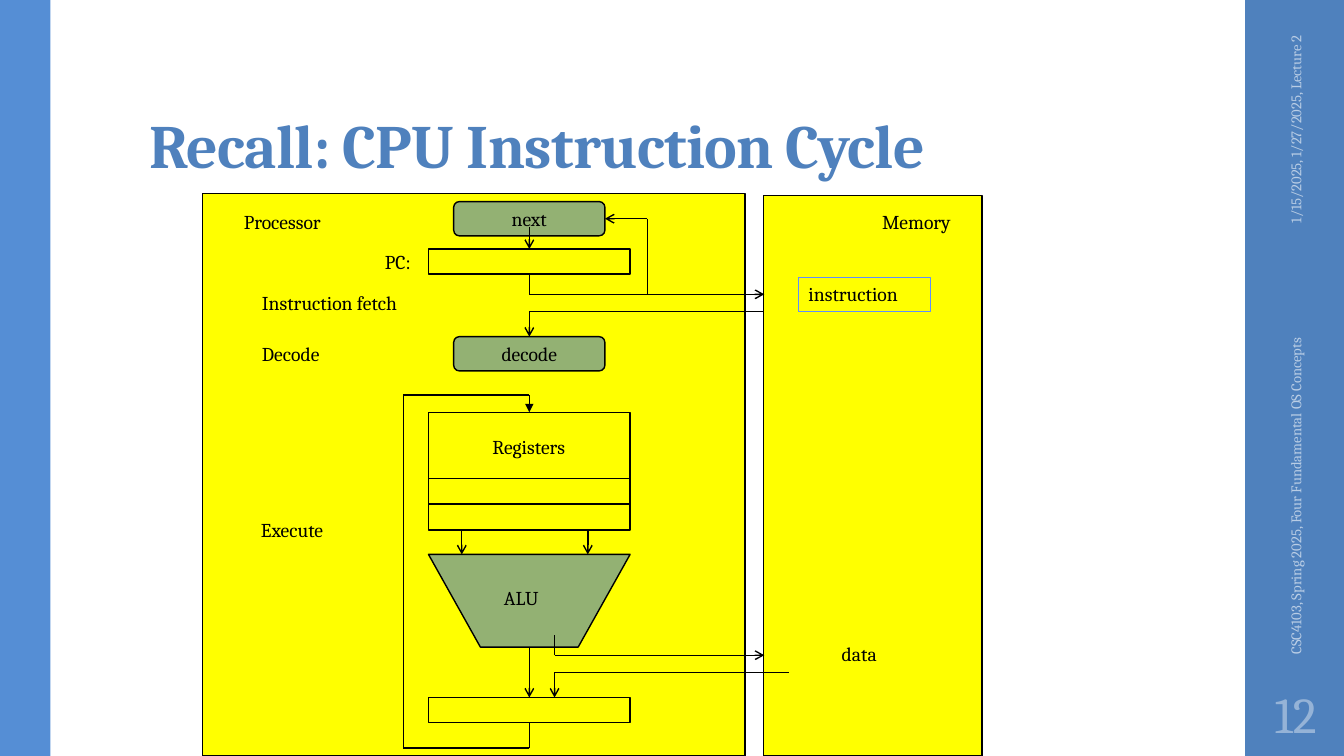
from dataclasses import dataclass
from lxml.etree import SubElement
from pptx import Presentation
from pptx.dml.color import RGBColor
from pptx.enum.shapes import MSO_CONNECTOR, MSO_SHAPE
from pptx.enum.text import MSO_ANCHOR, MSO_AUTO_SIZE, PP_ALIGN
from pptx.oxml.ns import qn
from pptx.util import Inches, Pt


@dataclass(frozen=True)
class Theme:
    font: str = "Cambria"
    blue: str = "4F81BD"
    edge: str = "558ED5"
    pale: str = "B9CDE5"
    mist: str = "95B3D7"
    rim: str = "618FFD"
    yellow: str = "FFFF00"
    ink: str = "000000"
    alpha: int = 61
    title: float = 44
    label: float = 14
    note: float = 10.5
    number: float = 36


THEME = Theme()
FIT = MSO_AUTO_SIZE.SHAPE_TO_FIT_TEXT
LABEL = {"word_wrap": False, "auto_size": FIT}
MIDDLE = {"word_wrap": True, "vertical_anchor": MSO_ANCHOR.MIDDLE}


def apply(target, values):
    for name, value in values.items():
        setattr(target, name, value)


def place(box, x, y, w, h):
    return [Inches(n) for n in (box[0] + x, box[1] + y, w, h)]


def write(shape, text, frame=LABEL, align=PP_ALIGN.LEFT,
          size=THEME.label, color=THEME.ink, bold=False):
    apply(shape.text_frame, frame)
    para = shape.text_frame.paragraphs[0]
    para.alignment = align
    run = para.add_run()
    run.text = text
    apply(run.font, {"name": THEME.font, "size": Pt(size), "bold": bold})
    run.font.color.rgb = RGBColor.from_string(color)
    return para


def label(slide, box, area, text, **style):
    shape = slide.shapes.add_textbox(*place(box, *area))
    write(shape, text, **style)
    return shape


def block(slide, box, area, kind=MSO_SHAPE.RECTANGLE, fill=None,
          line=THEME.ink, width=1, alpha=None):
    shape = slide.shapes.add_shape(kind, *place(box, *area))
    shape.shadow.inherit = False
    if fill:
        shape.fill.solid()
        shape.fill.fore_color.rgb = RGBColor.from_string(fill)
    else:
        shape.fill.background()
    if alpha:
        color = shape._element.spPr.find(qn("a:solidFill"))[0]
        SubElement(color, qn("a:alpha"), val=str(alpha * 1000))
    if line:
        shape.line.color.rgb = RGBColor.from_string(line)
        shape.line.width = Pt(width)
    else:
        shape.line.fill.background()
    return shape


def link(slide, box, start, end, head=None, source=None, target=None):
    ends = [Inches(base + n) for point in (start, end)
            for base, n in zip(box, point)]
    line = slide.shapes.add_connector(MSO_CONNECTOR.STRAIGHT, *ends)
    line.line.color.rgb = RGBColor.from_string(THEME.ink)
    line.line.width = Pt(1)
    if head:
        SubElement(line.line._get_or_add_ln(), qn("a:tailEnd"), type=head)
    SubElement(line._element.spPr, qn("a:effectLst"))
    if source:
        line.begin_connect(*source)
    if target:
        line.end_connect(*target)


def sidebar(slide, box):
    block(slide, box, (0, 0, box[2], box[3]), fill=THEME.blue, line=None)
    notes = [
        ((-0.54, 1.09, 2.08, 0.4), "1/15/2025, 1/27/2025, Lecture 2", PP_ALIGN.RIGHT),
        ((-1.46, 4.43, 3.92, 0.4),
         "CSC4103, Spring 2025, Four Fundamental OS Concepts", PP_ALIGN.LEFT),
    ]
    for area, text, align in notes:
        note = label(slide, box, area, text, frame=MIDDLE, align=align,
                     size=THEME.note, color=THEME.pale)
        note.rotation = 270
    inset = Inches(0.05)
    frame = MIDDLE | {"margin_left": inset, "margin_right": inset}
    label(slide, box, (0, 6.75, box[2], 0.65), "12", frame=frame,
          align=PP_ALIGN.CENTER, size=THEME.number, color=THEME.mist)


def heading(slide, box):
    shape = slide.shapes.add_textbox(*place(box, 0, 0, box[2], box[3]))
    frame = {"word_wrap": True, "vertical_anchor": MSO_ANCHOR.BOTTOM,
             "margin_top": Inches(0.03)}
    para = write(shape, "Recall: CPU Instruction Cycle", frame,
                 size=THEME.title, color=THEME.blue, bold=True)
    para.line_spacing = 0.9
    para.runs[0].font._element.set("spc", "-50")


def panel(slide, box, area, text):
    block(slide, box, (0, 0, box[2], box[3]), fill=THEME.yellow)
    label(slide, box, area, text)


def memory(slide, box):
    panel(slide, box, (1.08, 0.09, 1.06, 0.34), "Memory")
    cell = block(slide, box, (0.35, 0.81, 1.31, 0.34), line=THEME.rim, width=0.75)
    write(cell, "instruction", LABEL | {"vertical_anchor": MSO_ANCHOR.TOP})
    label(slide, box, (0.68, 4.38, 0.65, 0.34), "data")


def fetch(slide, box):
    steps = []
    for y, text in ((0, "next"), (1.34, "decode")):
        step = block(slide, box, (0.5, y, 1.5, 0.34), MSO_SHAPE.ROUNDED_RECTANGLE,
                     THEME.blue, alpha=THEME.alpha)
        write(step, text, MIDDLE, PP_ALIGN.CENTER)
        steps.append(step)
    after, decode = steps
    count = block(slide, box, (0.25, 0.47, 2, 0.25))
    for area, text in (
        ((-0.28, 0.43, 0.57, 0.34), "PC:"),
        ((-1.5, 0.84, 2.05, 0.34), "Instruction fetch"),
        ((-1.5, 1.34, 0.99, 0.34), "Decode"),
    ):
        label(slide, box, area, text)
    mid, bus, out, back = 1.25, 3.58, 0.92, 1.09
    link(slide, box, (mid, out), (mid, 0.72), target=(count, 2))
    link(slide, box, (mid, out), (bus, out), "arrow")
    link(slide, box, (mid, back), (bus, back))
    link(slide, box, (mid, back), (mid, 1.34), "arrow", target=(decode, 0))
    link(slide, box, (mid, 0.25), (mid, 0.47), "arrow", target=(count, 0))
    link(slide, box, (2.42, out), (2.42, 0.17))
    link(slide, box, (2.42, 0.17), (2, 0.17), "arrow", target=(after, 3))


def execute(slide, box):
    alu = block(slide, box, (0.25, 1.58, 2, 0.92), MSO_SHAPE.TRAPEZOID,
                THEME.blue, alpha=THEME.alpha)
    alu.adjustments[0] = 0.56
    alu._element.spPr.xfrm.set("flipV", "1")
    bank = block(slide, box, (0.25, 0.17, 2, 1.17))
    block(slide, box, (0.25, 0.83, 2, 0.25))
    result = block(slide, box, (0.25, 3, 2, 0.25))
    label(slide, box, (0.72, 0.35, 1.05, 0.34), "Registers", align=PP_ALIGN.CENTER)
    label(slide, box, (0.9, 1.84, 0.68, 0.34), "ALU")
    label(slide, box, (-1.51, 1.17, 1.04, 0.34), "Execute")
    mid, port, out, back, base = 1.25, 1.5, 2.58, 2.75, box[3]
    for x in (0.58, 1.83):
        link(slide, box, (x, 1.33), (x, 1.58), "arrow")
    link(slide, box, (port, out), (port, 2.38))
    link(slide, box, (port, out), (3.58, out), "arrow")
    link(slide, box, (port, back), (3.83, back))
    link(slide, box, (port, back), (port, 3), "arrow")
    link(slide, box, (mid, 2.5), (mid, 3), "arrow", target=(result, 0))
    link(slide, box, (mid, 3.25), (mid, base), source=(result, 2))
    loop = [(mid, base), (0, base), (0, 0), (mid, 0)]
    for start, end in zip(loop, loop[1:]):
        link(slide, box, start, end)
    link(slide, box, (mid, 0), (mid, 0.17), "triangle", target=(bank, 0))


def main():
    deck = Presentation()
    apply(deck, {"slide_width": Inches(13.33), "slide_height": Inches(7.5)})
    slide = deck.slides.add_slide(deck.slide_layouts[6])
    sidebar(slide, (12.35, 0, 1, 7.5))
    block(slide, (0, 0), (0, 0, 0.5, 7.5), fill=THEME.edge, line=None)
    panel(slide, (2.01, 1.92, 5.38, 5.58), (0.31, 0.11, 1.25, 0.34), "Processor")
    heading(slide, (1.38, 0.32, 10.6, 1.53))
    memory(slide, (7.57, 1.94, 2.17, 5.56))
    fetch(slide, (4, 2, 3.58, 1.68))
    execute(slide, (4, 3.92, 3.83, 3.5))
    deck.save("out.pptx")


if __name__ == "__main__":
    main()
